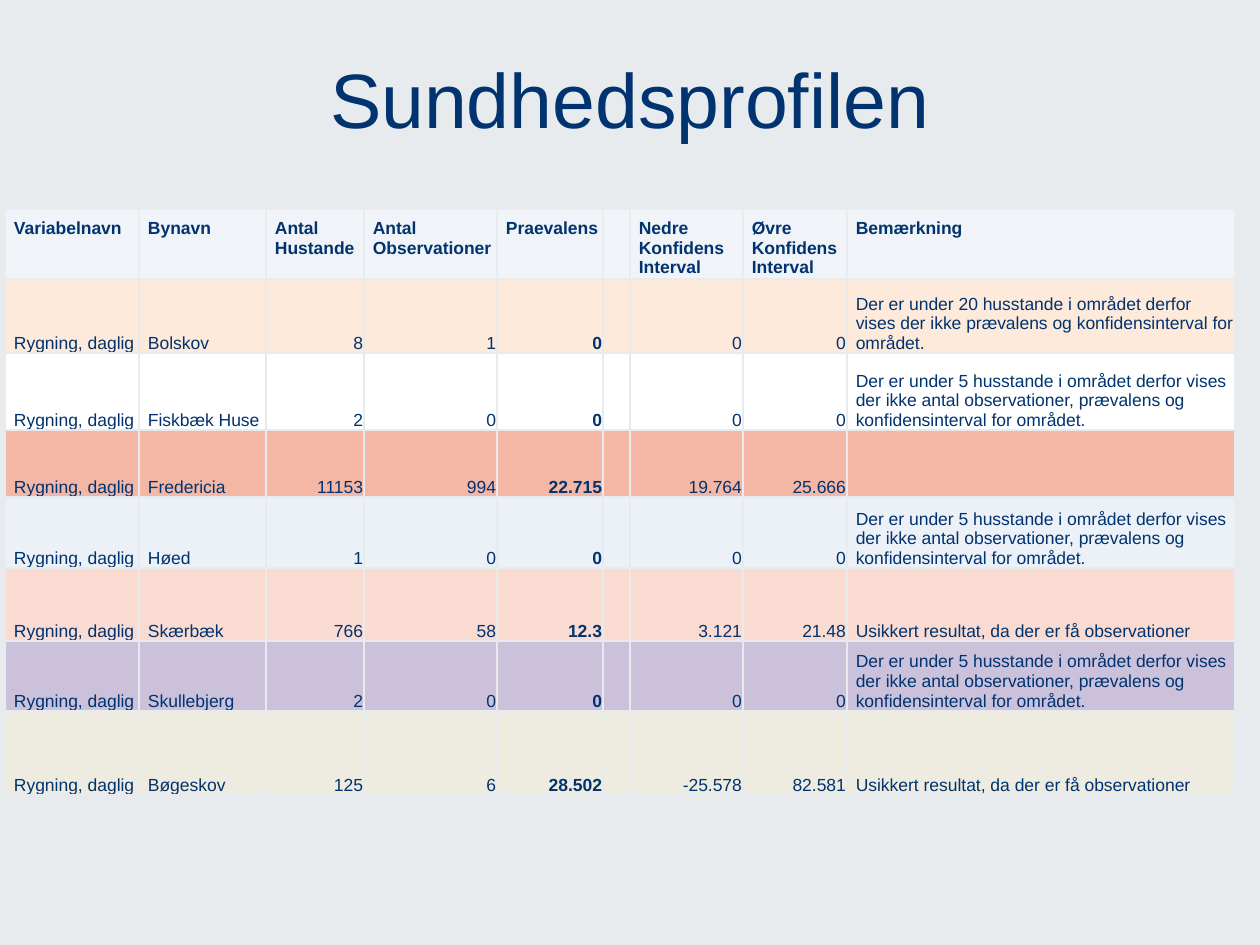
"""Build the Sundhedsprofilen slide with its table of smoking figures."""
from lxml.etree import SubElement
from pptx import Presentation
from pptx.dml.color import RGBColor
from pptx.enum.text import MSO_ANCHOR, PP_ALIGN
from pptx.oxml.ns import qn
from pptx.util import Pt

PX = 914400 // 126
NAVY, PALE = "00336F", "E7EBEE"


def paint(fill, tint):
    fill.solid()
    fill.fore_color.rgb = RGBColor.from_string(tint)


def style(par, size, bold, align):
    par.alignment = align
    par.font.name = "Arial"
    par.font.size = Pt(size)
    par.font.bold = bold
    par.font.color.rgb = RGBColor.from_string(NAVY)


deck = Presentation()
deck.slide_width, deck.slide_height = 1260 * PX, 945 * PX
slide = deck.slides.add_slide(deck.slide_layouts[6])
paint(slide.background.fill, PALE)

few = ("Der er under 5 husstande i området derfor vises der ikke antal "
       "observationer, prævalens og konfidensinterval for området.")
none = ("Der er under 20 husstande i området derfor vises der ikke "
        "prævalens og konfidensinterval for området.")
vague = "Usikkert resultat, da der er få observationer"
head = ["Variabelnavn", "Bynavn", "Antal\nHustande", "Antal\nObservationer",
        "Praevalens", "", "Nedre\nKonfidens\nInterval",
        "Øvre\nKonfidens\nInterval", "Bemærkning"]
towns = [
    ("FDEADA", 74, "Bolskov", "8", "1", "0", "0", "0", none),
    ("FFFFFF", 77, "Fiskbæk Huse", "2", "0", "0", "0", "0", few),
    ("F4B6A5", 67, "Fredericia", "11153", "994", "22.715", "19.764", "25.666", ""),
    ("ECF0F7", 71, "Høed", "1", "0", "0", "0", "0", few),
    ("F9DBD2", 73, "Skærbæk", "766", "58", "12.3", "3.121", "21.48", vague),
    ("CCC1DA", 70, "Skullebjerg", "2", "0", "0", "0", "0", few),
    ("EEECE1", 84, "Bøgeskov", "125", "6", "28.502", "-25.578", "82.581", vague),
]
rows = [("F0F3F7", 70, head)]
for tint, high, town, homes, seen, rate, low, top, note in towns:
    rows.append((tint, high, ["Rygning, daglig", town, homes, seen, rate, "",
                              low, top, note]))
wide = [134, 127, 98, 133, 106, 27, 113, 104, 388]
tall = [high for tint, high, texts in rows]

frame = slide.shapes.add_table(len(rows), len(wide), 5 * PX, 209 * PX,
                               sum(wide) * PX, sum(tall) * PX)
table = frame.table
for col, width in zip(table.columns, wide):
    col.width = width * PX

for r, (tint, high, texts) in enumerate(rows):
    table.rows[r].height = high * PX
    for c, text in enumerate(texts):
        cell = table.cell(r, c)
        cell.text = text
        cell.margin_left, cell.margin_top = 9 * PX, 10 * PX
        cell.margin_right, cell.margin_bottom = PX, 0
        cell.vertical_anchor = MSO_ANCHOR.BOTTOM if r else MSO_ANCHOR.TOP
        align = PP_ALIGN.RIGHT if r and 2 <= c <= 7 else PP_ALIGN.LEFT
        for par in cell.text_frame.paragraphs:
            style(par, 10, r == 0 or c == 4, align)
        for side in ("lnL", "lnR", "lnT", "lnB"):
            line = SubElement(cell._tc.get_or_add_tcPr(), qn("a:" + side), w="12700")
            solid = SubElement(line, qn("a:solidFill"))
            SubElement(solid, qn("a:srgbClr"), val=PALE)
        paint(cell.fill, tint)

title = slide.shapes.add_textbox(63 * PX, 38 * PX, 1134 * PX, 157 * PX).text_frame
title.word_wrap = True
title.margin_top = 14 * PX
title.text = "Sundhedsprofilen"
style(title.paragraphs[0], 44, False, PP_ALIGN.CENTER)

deck.save("out.pptx")
